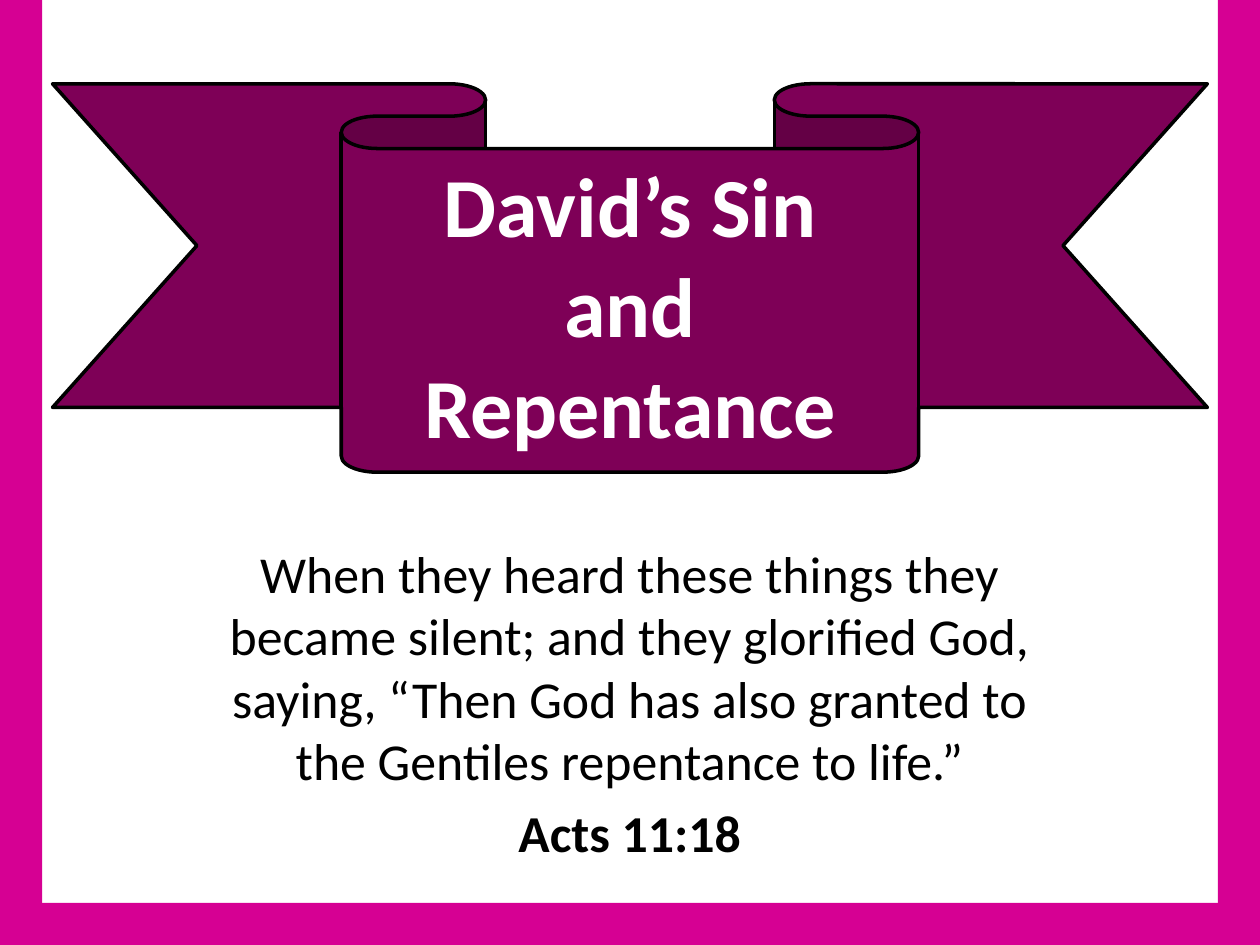
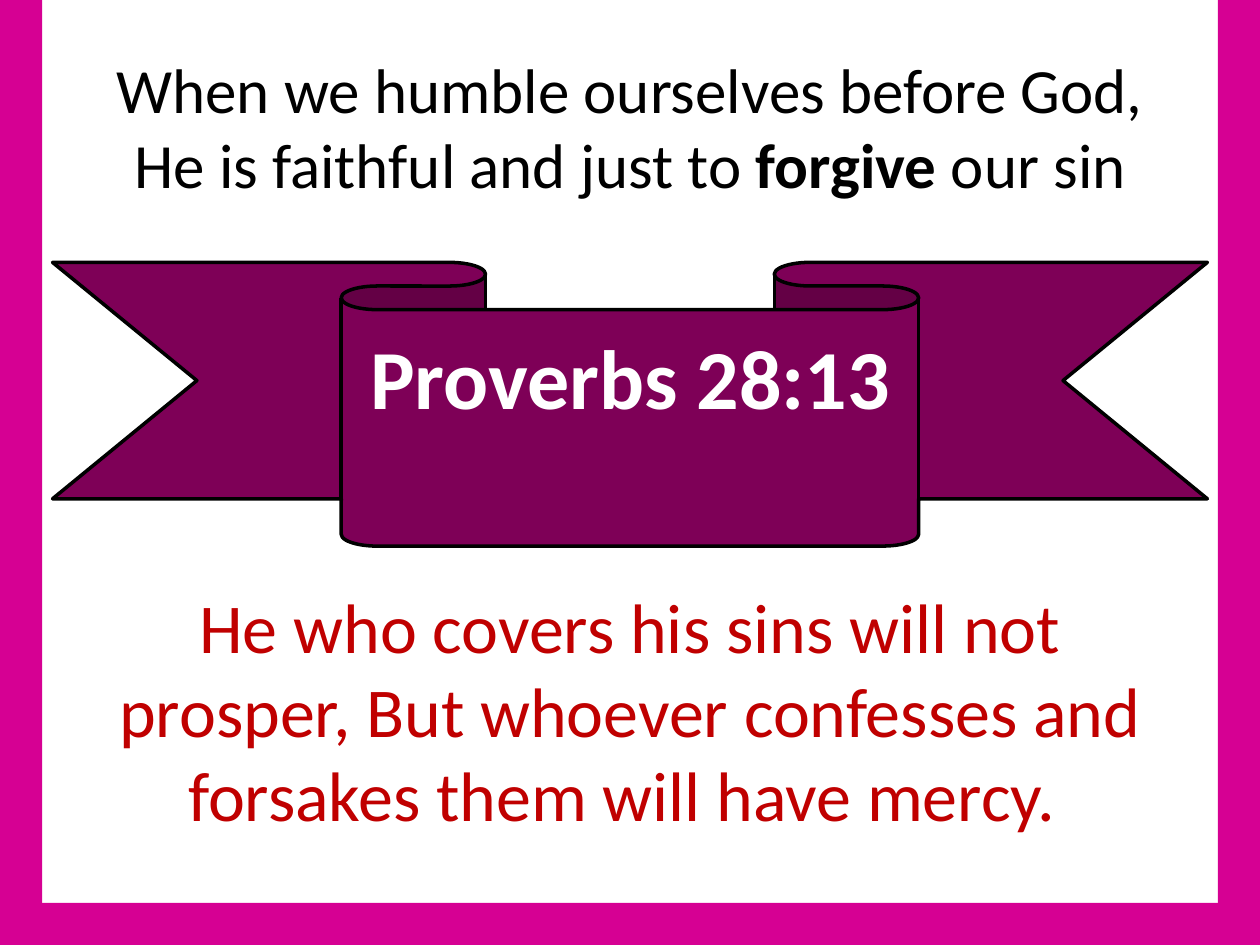
import pptx
import pptx.util
import pptx.dml.color
import pptx.enum.shapes
import pptx.enum.text

Cm = pptx.util.Cm
Pt = pptx.util.Pt
SHAPES = pptx.enum.shapes.MSO_SHAPE
MAGENTA = pptx.dml.color.RGBColor(0xD6, 0x00, 0x93)
PLUM = pptx.dml.color.RGBColor(0x7E, 0x00, 0x57)
BLACK = pptx.dml.color.RGBColor(0x00, 0x00, 0x00)
WHITE = pptx.dml.color.RGBColor(0xFF, 0xFF, 0xFF)
RED = pptx.dml.color.RGBColor(0xC0, 0x00, 0x00)
FONT = "Calibri"
WIDTH, HEIGHT, BORDER = 25.4, 19.05, 0.85


def add_block(slide, kind, left, top, width, height, color):
    block = slide.shapes.add_shape(kind, Cm(left), Cm(top), Cm(width), Cm(height))
    block.shadow.inherit = False
    block.fill.solid()
    block.fill.fore_color.rgb = color
    block.line.fill.background()
    return block


def write_text(frame, paragraphs, size, color, space_before=0):
    frame.word_wrap = True
    frame.auto_size = pptx.enum.text.MSO_AUTO_SIZE.NONE
    frame.vertical_anchor = pptx.enum.text.MSO_ANCHOR.TOP
    for index, pieces in enumerate(paragraphs):
        paragraph = frame.add_paragraph() if index else frame.paragraphs[0]
        paragraph.alignment = pptx.enum.text.PP_ALIGN.CENTER
        paragraph.space_before = Pt(space_before)
        for words, bold in pieces:
            run = paragraph.add_run()
            run.text = words
            run.font.name = FONT
            run.font.size = Pt(size)
            run.font.bold = bold
            run.font.color.rgb = color


lessons = [
    {
        "title": "David’s Sin and Repentance",
        "ribbon": (1.69, 7.83),
        "title_box": (2.96, 6.4),
        "verses": [
            (3.81, 10.8, 17.78, 6.78, 29.6, BLACK, 5.9, [
                [("When they heard these things they became silent; and they glorified God, "
                  "saying, “Then God has also granted to the Gentiles repentance to life.”", False)],
                [("Acts 11:18", True)],
            ]),
        ],
    },
    {
        "title": "Proverbs 28:13",
        "ribbon": (5.29, 5.72),
        "title_box": (6.43, 4.37),
        "verses": [
            (1.69, 11.64, 22.02, 5.5, 40, RED, 8, [
                [("He who covers his sins will not prosper, But whoever confesses "
                  "and forsakes them will have mercy. ", False)],
            ]),
            (1.27, 0.89, 22.86, 3.33, 36, BLACK, 0, [
                [("When we humble ourselves before God, He is faithful and just to ", False),
                 ("forgive", True), (" our sin", False)],
            ]),
        ],
    },
]

deck = pptx.Presentation()
deck.slide_width = Cm(WIDTH)
deck.slide_height = Cm(HEIGHT)

for lesson in lessons:
    slide = deck.slides.add_slide(deck.slide_layouts[5])
    slide.background.fill.solid()
    slide.background.fill.fore_color.rgb = WHITE

    for left in (0, WIDTH - BORDER):
        add_block(slide, SHAPES.RECTANGLE, left, 0, BORDER, HEIGHT, MAGENTA)
    ribbon_top, ribbon_height = lesson["ribbon"]
    ribbon = add_block(slide, SHAPES.DOWN_RIBBON, 1.06, ribbon_top, 23.28, ribbon_height, PLUM)
    ribbon.line.color.rgb = BLACK
    ribbon.line.width = Pt(2)
    add_block(slide, SHAPES.RECTANGLE, 0, HEIGHT - BORDER, WIDTH, BORDER, MAGENTA)

    title = slide.shapes.title
    title_top, title_height = lesson["title_box"]
    title.left, title.top = Cm(7.2), Cm(title_top)
    title.width, title.height = Cm(11.01), Cm(title_height)
    write_text(title.text_frame, [[(lesson["title"], True)]], 48, WHITE)
    slide.shapes._spTree.append(title._element)

    for left, top, width, height, size, color, space_before, paragraphs in lesson["verses"]:
        verse = slide.shapes.add_textbox(Cm(left), Cm(top), Cm(width), Cm(height))
        write_text(verse.text_frame, paragraphs, size, color, space_before)

deck.save("out.pptx")
